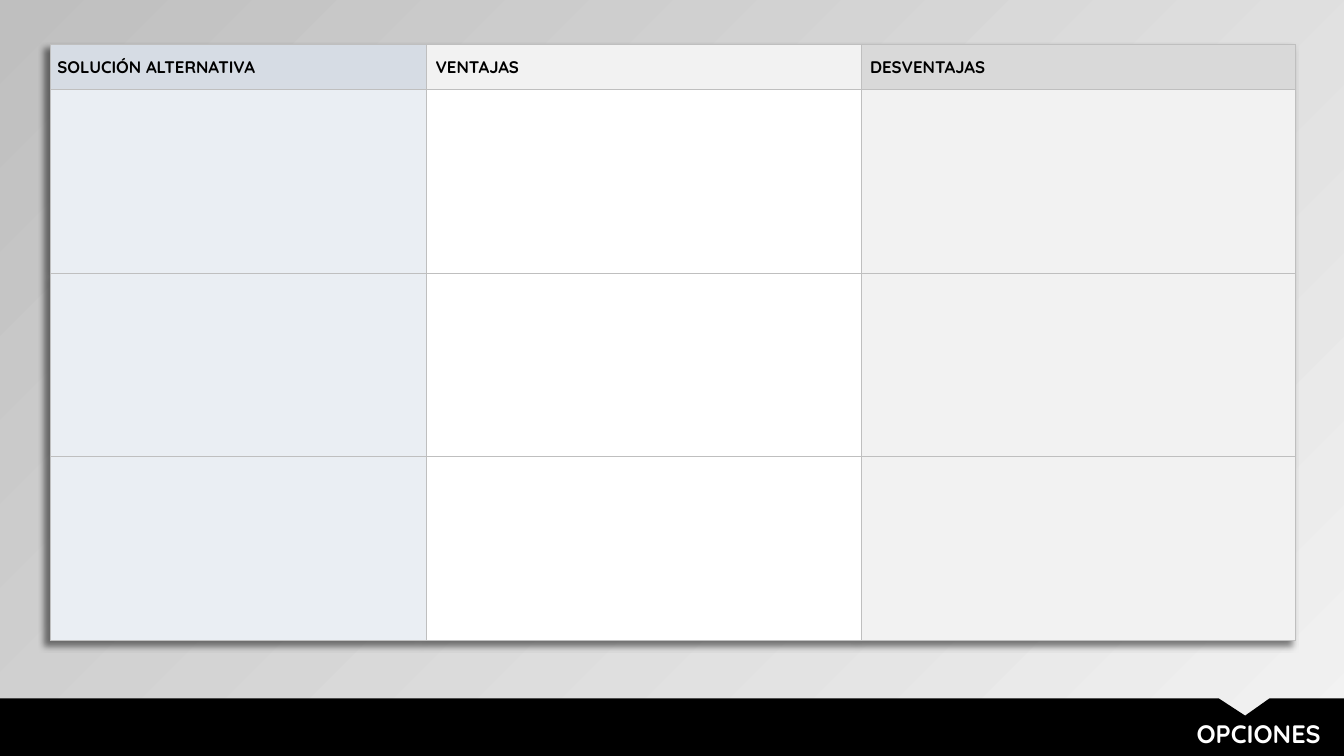
from dataclasses import dataclass
from lxml import etree
from pptx import Presentation
from pptx.dml.color import RGBColor
from pptx.enum.text import MSO_ANCHOR, MSO_AUTO_SIZE, PP_ALIGN
from pptx.oxml import parse_xml
from pptx.oxml.ns import qn
from pptx.util import Inches, Pt

MIDDLE, TOP = MSO_ANCHOR.MIDDLE, MSO_ANCHOR.TOP
RIGHT, FIXED = PP_ALIGN.RIGHT, MSO_AUTO_SIZE.NONE
NS = "http://schemas.openxmlformats.org/drawingml/2006/main"

SIZE = (13.33, 7.5)
TITLE = "OPCIONES"
TITLE_BOX = (4.14, 7.08, 9.06, 0.4)
HEADS = ["SOLUCIÓN ALTERNATIVA", "VENTAJAS", "DESVENTAJAS"]
INSETS = [(0.07, 0, 0.07, 0), (0.09, 0.01, 0.01, 0), (0.09, 0.01, 0.01, 0)]
WIDTHS = [3.73, 4.31, 4.31]
HEIGHTS = [0.45] + [1.82] * 3
ORIGIN = (0.5, 0.44)
BAND = [(0, 6.93), (12.09, 6.93), (12.35, 7.1), (12.59, 6.93),
        (13.33, 6.93), (13.33, 7.5), (0, 7.5)]


@dataclass(frozen=True)
class Theme:
    """Colours and type sizes of the slide."""
    font: str = "Quicksand"
    head: int = 12
    title: int = 18
    rule: float = 0.5
    ink: str = "000000"
    paper: str = "FFFFFF"
    line: str = "BFBFBF"
    back: tuple = ("F2F2F2", "BFBFBF")
    heads: tuple = ("D6DCE4", "F2F2F2", "D9D9D9")
    cells: tuple = ("EAEEF3", "FFFFFF", "F2F2F2")


THEME = Theme()


def rgb(code):
    """Turn a hex code into a colour."""
    return RGBColor.from_string(code)


def style(par, size, color):
    """Set the font of a paragraph."""
    font = par.font
    font.name, font.size, font.bold = THEME.font, Pt(size), True
    font.color.rgb = rgb(color)


def border(cell):
    """Draw a thin line on each side of a cell."""
    props = cell._tc.get_or_add_tcPr()
    for spot, side in enumerate(("lnL", "lnR", "lnT", "lnB")):
        line = etree.Element(qn(f"a:{side}"), w=str(Pt(THEME.rule)))
        fill = etree.SubElement(line, qn("a:solidFill"))
        etree.SubElement(fill, qn("a:srgbClr"), val=THEME.line)
        props.insert(spot, line)


def shade(table):
    """Cast a soft shadow down and to the left of the table."""
    table._tbl.tblPr.insert(0, parse_xml(
        f'<a:effectLst xmlns:a="{NS}"><a:outerShdw blurRad="63500" '
        'dist="63500" dir="8100000" algn="tr" rotWithShape="0">'
        '<a:srgbClr val="000000"><a:alpha val="50000"/></a:srgbClr>'
        '</a:outerShdw></a:effectLst>'))


def add_grid(slide):
    """Add the table of options."""
    box = (*ORIGIN, sum(WIDTHS), sum(HEIGHTS))
    table = slide.shapes.add_table(
        len(HEIGHTS), len(WIDTHS), *map(Inches, box)).table
    table.first_row = table.horz_banding = False
    for col, width in zip(table.columns, WIDTHS):
        col.width = Inches(width)
    for r, height in enumerate(HEIGHTS):
        table.rows[r].height = Inches(height)
        fills = THEME.cells if r else THEME.heads
        for c, fill in enumerate(fills):
            cell = table.cell(r, c)
            cell.fill.solid()
            cell.fill.fore_color.rgb = rgb(fill)
            border(cell)
            if r == 0:
                cell.text = HEADS[c]
                cell.vertical_anchor = MIDDLE
                (cell.margin_left, cell.margin_top, cell.margin_right,
                 cell.margin_bottom) = map(Inches, INSETS[c])
            style(cell.text_frame.paragraphs[0], THEME.head, THEME.ink)
    shade(table)


def add_band(slide):
    """Add the notched band along the foot."""
    first, *rest = [(Inches(x), Inches(y)) for x, y in BAND]
    path = slide.shapes.build_freeform(*first)
    path.add_line_segments(rest, close=True)
    band = path.convert_to_shape()
    band.shadow.inherit = False
    band.fill.solid()
    band.fill.fore_color.rgb = rgb(THEME.ink)
    band.line.fill.background()


def add_title(slide):
    """Place the title on top of the band."""
    title = slide.shapes.title
    title.left, title.top, title.width, title.height = map(Inches, TITLE_BOX)
    frame = title.text_frame
    frame.text = TITLE
    frame.word_wrap, frame.auto_size = True, FIXED
    frame.vertical_anchor = TOP
    par = frame.paragraphs[0]
    par.alignment = RIGHT
    style(par, THEME.title, THEME.paper)
    slide.shapes._spTree.append(title._element)


def main():
    """Build and save the slide."""
    deck = Presentation()
    deck.slide_width, deck.slide_height = map(Inches, SIZE)
    slide = deck.slides.add_slide(deck.slide_layouts[5])
    back = slide.background.fill
    back.gradient()
    back.gradient_angle = 135
    for stop, color in zip(back.gradient_stops, THEME.back):
        stop.color.rgb = rgb(color)
    add_grid(slide)
    add_band(slide)
    add_title(slide)
    deck.save("out.pptx")


if __name__ == "__main__":
    main()
